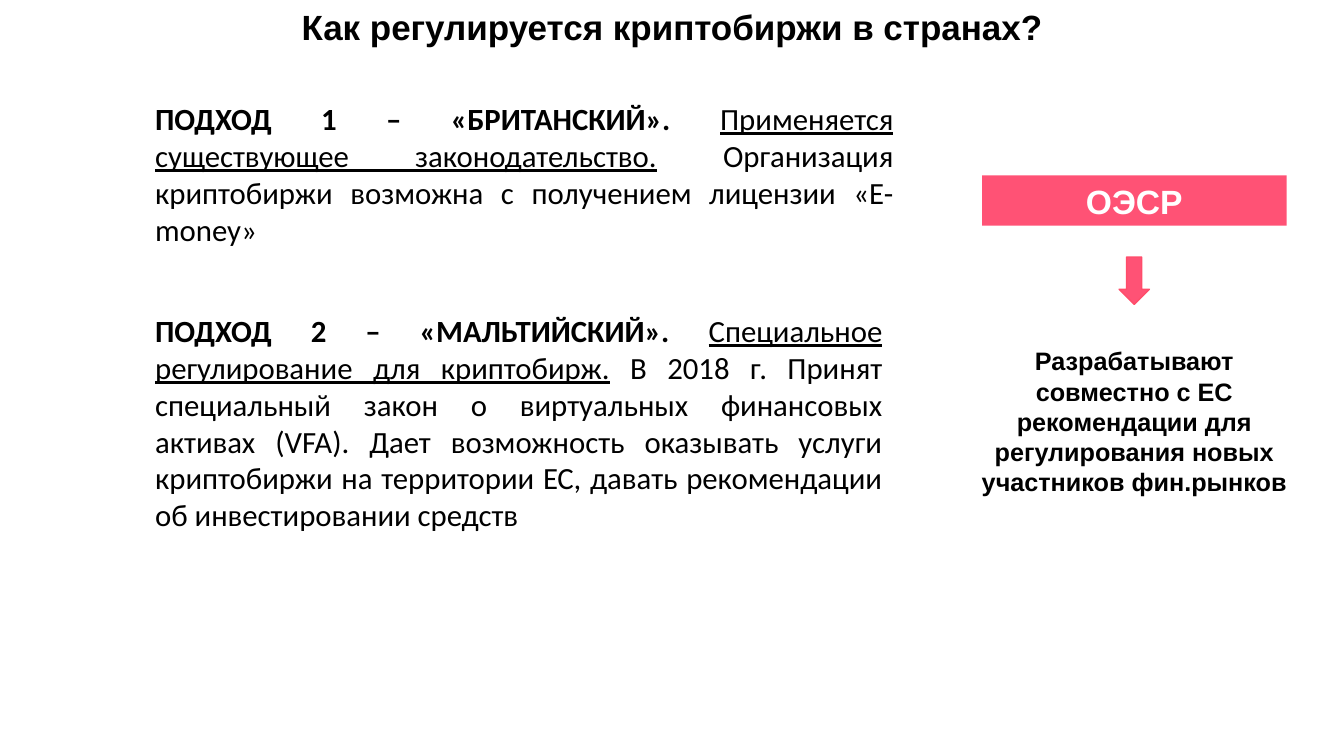
from dataclasses import dataclass

from pptx import Presentation
from pptx.dml.color import RGBColor
from pptx.enum.shapes import MSO_SHAPE
from pptx.enum.text import MSO_ANCHOR, PP_ALIGN
from pptx.util import Inches, Pt

RECT, ARROW = MSO_SHAPE.RECTANGLE, MSO_SHAPE.DOWN_ARROW
TOP, MIDDLE = MSO_ANCHOR.TOP, MSO_ANCHOR.MIDDLE
CENTER, JUSTIFY = PP_ALIGN.CENTER, PP_ALIGN.JUSTIFY


@dataclass(frozen=True)
class Theme:
    """Colours, fonts and type sizes of the slide."""
    ink: str = "000000"
    white: str = "FFFFFF"
    pink: str = "FF5275"
    edge: str = "FF4D6A"
    head: str = "Arial"
    text: str = "Calibri"
    title: int = 25
    label: int = 24
    body: int = 22
    note: int = 18


THEME = Theme()
TITLE = "Как регулируется криптобиржи в странах?"
WAYS = [
    ((1.44, 0.94, 7.52, 1.58),
     ("ПОДХОД 1 – «БРИТАНСКИЙ». ",
      "Применяется существующее законодательство.",
      " Организация криптобиржи возможна с получением лицензии «E-money»")),
    ((1.44, 3.04, 7.41, 2.69),
     ("ПОДХОД 2 – «МАЛЬТИЙСКИЙ». ",
      "Специальное регулирование для криптобирж.",
      " В 2018 г. Принят специальный закон о виртуальных финансовых активах "
      "(VFA). Дает возможность оказывать услуги криптобиржи на территории ЕС, "
      "давать рекомендации об инвестировании средств")),
]
GROUP = "ОЭСР"
NOTE = ("Разрабатывают совместно с ЕС рекомендации для регулирования "
        "новых участников фин.рынков")


def style(item, **look):
    """Set each given format value on the item."""
    for name, value in look.items():
        setattr(item, name, value)


def write(shape, runs, font, size, color, align, anchor):
    """Fill the shape with one paragraph of (text, look) runs."""
    frame = shape.text_frame
    style(frame, word_wrap=True, vertical_anchor=anchor)
    para = frame.paragraphs[0]
    para.alignment = align
    for text, look in runs:
        run = para.add_run()
        run.text = text
        style(run.font, name=font, size=Pt(size), **look)
        run.font.color.rgb = RGBColor.from_string(color)


def add_text(slide, box):
    """Add an empty text box in the box."""
    return slide.shapes.add_textbox(*map(Inches, box))


def add_block(slide, kind, box, edge=None):
    """Add a pink shape, outlined when an edge colour is given."""
    shape = slide.shapes.add_shape(kind, *map(Inches, box))
    shape.shadow.inherit = False
    shape.fill.solid()
    shape.fill.fore_color.rgb = RGBColor.from_string(THEME.pink)
    if edge:
        shape.line.color.rgb = RGBColor.from_string(edge)
        shape.line.width = Pt(1)
    else:
        shape.line.fill.background()
    return shape


def add_title(slide, box):
    """Place the slide title in the box."""
    title = slide.shapes.title
    style(title, **dict(zip(("left", "top", "width", "height"),
                            map(Inches, box))))
    write(title, [(TITLE, {"bold": True})], THEME.head, THEME.title,
          THEME.ink, CENTER, MIDDLE)


def add_way(slide, box, parts):
    """Describe one approach: bold name, underlined gist, plain detail."""
    looks = ({"bold": True}, {"underline": True}, {})
    write(add_text(slide, box), zip(parts, looks), THEME.text, THEME.body,
          THEME.ink, JUSTIFY, TOP)


def add_side(slide, box):
    """Stack the label, the arrow and the note, centred in the box."""
    left, top, width, height = box
    mid = left + width / 2
    bold = {"bold": True}
    label = add_block(slide, RECT, (mid - 1.51, top, 3.02, 0.5))
    write(label, [(GROUP, bold)], THEME.head, THEME.label, THEME.white,
          CENTER, MIDDLE)
    add_block(slide, ARROW, (mid - 0.15, top + 0.81, 0.3, 0.47), THEME.edge)
    note = add_text(slide, (left, top + 1.64, width, height - 1.64))
    write(note, [(NOTE, bold)], THEME.head, THEME.note, THEME.ink,
          CENTER, TOP)


def main():
    """Build and save the slide."""
    deck = Presentation()
    style(deck, slide_width=Inches(13.33), slide_height=Inches(7.5))
    slide = deck.slides.add_slide(deck.slide_layouts[5])
    add_title(slide, (0, 0, 13.33, 0.52))
    for box, parts in WAYS:
        add_way(slide, box, parts)
    add_side(slide, (9.5, 1.74, 3.5, 3.26))
    deck.save("out.pptx")


if __name__ == "__main__":
    main()
